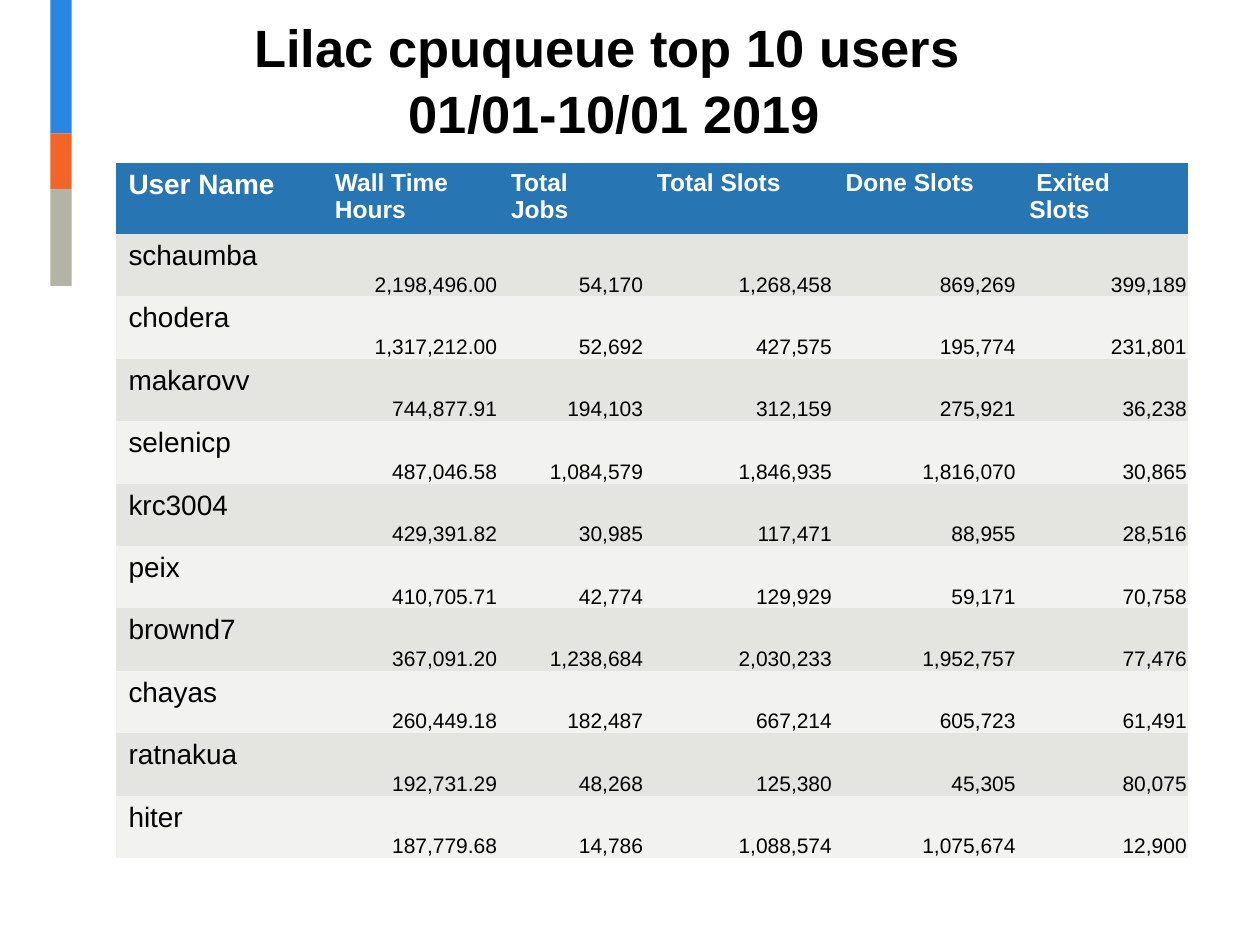
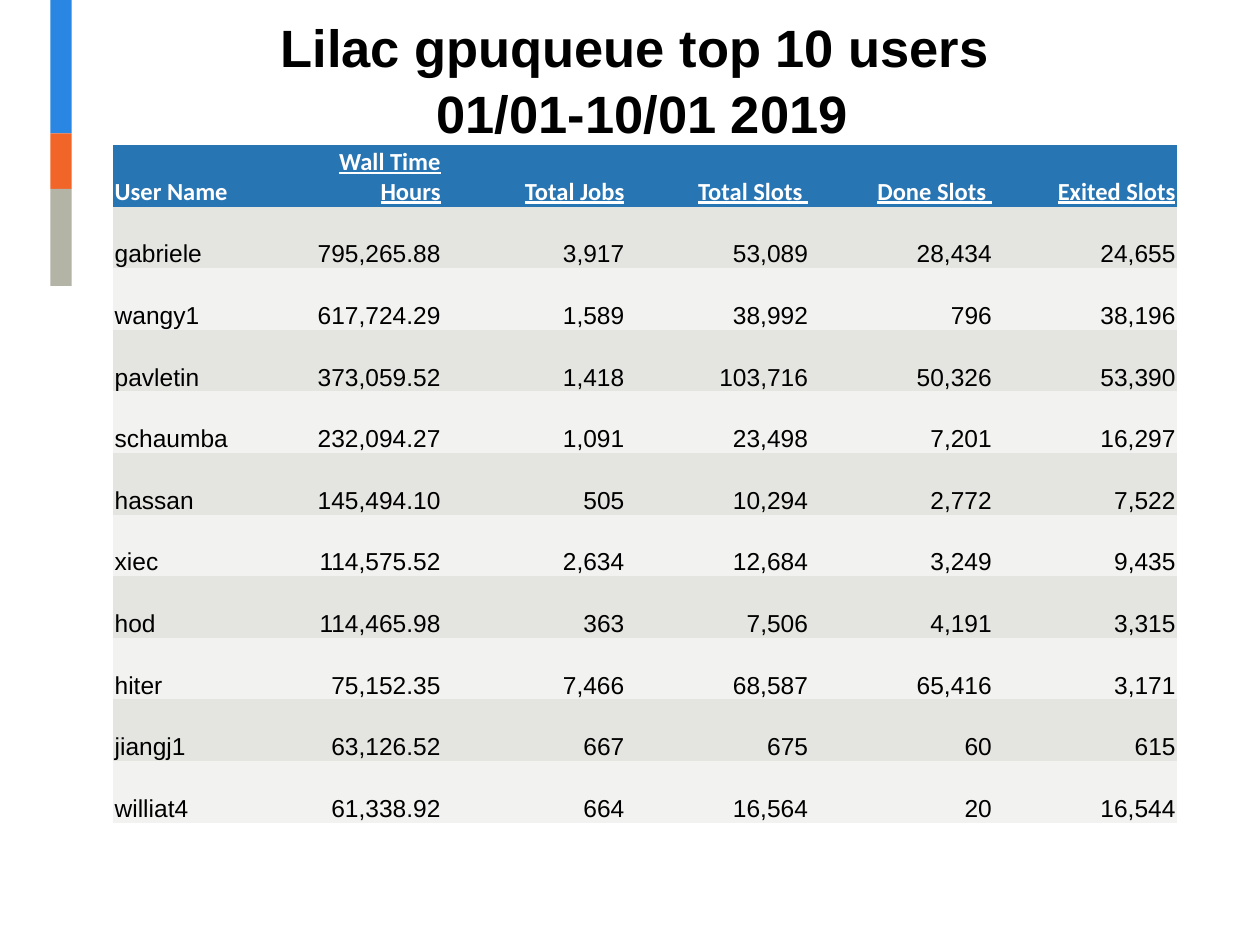
from collections import namedtuple

from pptx import Presentation
from pptx.dml.color import RGBColor
from pptx.enum.shapes import MSO_SHAPE
from pptx.enum.text import MSO_ANCHOR, PP_ALIGN
from pptx.util import Inches, Pt

RECTANGLE = MSO_SHAPE.RECTANGLE
TOP, BOTTOM = MSO_ANCHOR.TOP, MSO_ANCHOR.BOTTOM
LEFT, CENTER, RIGHT = PP_ALIGN.LEFT, PP_ALIGN.CENTER, PP_ALIGN.RIGHT

BLACK = RGBColor(0x00, 0x00, 0x00)
WHITE = RGBColor(0xFF, 0xFF, 0xFF)
HEADER_BLUE = RGBColor(0x28, 0x75, 0xB4)
BAND_DARK = RGBColor(0xE4, 0xE4, 0xE0)
BAND_LIGHT = RGBColor(0xF2, 0xF2, 0xF0)
STRIPE_BLUE = RGBColor(0x29, 0x86, 0xE2)
STRIPE_ORANGE = RGBColor(0xF2, 0x65, 0x29)
STRIPE_GREY = RGBColor(0xB3, 0xB3, 0xA6)

# The page is a grid of 100 columns by 75 rows
SLIDE_WIDTH, SLIDE_HEIGHT = Inches(10), Inches(7.5)
COLUMN, ROW = SLIDE_WIDTH / 100, SLIDE_HEIGHT / 75
Box = namedtuple("Box", "left top width height")

STRIPES = [(STRIPE_BLUE, 10.6), (STRIPE_ORANGE, 4.4), (STRIPE_GREY, 7.7)]
PERIOD = " 01/01-10/01 2019"
NO_TABLE_STYLE = "{2D5ABB26-0587-4C30-8999-92F81FD0307C}"

CPU_HEADERS = ["User Name", "Wall Time Hours", "Total Jobs", "Total Slots",
               "Done Slots", " Exited Slots"]
CPU_USERS = [
    ("schaumba", "2,198,496.00", "54,170", "1,268,458", "869,269", "399,189"),
    ("chodera", "1,317,212.00", "52,692", "427,575", "195,774", "231,801"),
    ("makarovv", "744,877.91", "194,103", "312,159", "275,921", "36,238"),
    ("selenicp", "487,046.58", "1,084,579", "1,846,935", "1,816,070", "30,865"),
    ("krc3004", "429,391.82", "30,985", "117,471", "88,955", "28,516"),
    ("peix", "410,705.71", "42,774", "129,929", "59,171", "70,758"),
    ("brownd7", "367,091.20", "1,238,684", "2,030,233", "1,952,757", "77,476"),
    ("chayas", "260,449.18", "182,487", "667,214", "605,723", "61,491"),
    ("ratnakua", "192,731.29", "48,268", "125,380", "45,305", "80,075"),
    ("hiter", "187,779.68", "14,786", "1,088,574", "1,075,674", "12,900"),
]
GPU_HEADERS = ["User Name", "Wall Time Hours", "Total Jobs", "Total Slots ",
               "Done Slots ", "Exited Slots"]
GPU_USERS = [
    ("gabriele", "795,265.88", "3,917", "53,089", "28,434", "24,655"),
    ("wangy1", "617,724.29", "1,589", "38,992", "796", "38,196"),
    ("pavletin", "373,059.52", "1,418", "103,716", "50,326", "53,390"),
    ("schaumba", "232,094.27", "1,091", "23,498", "7,201", "16,297"),
    ("hassan", "145,494.10", "505", "10,294", "2,772", "7,522"),
    ("xiec", "114,575.52", "2,634", "12,684", "3,249", "9,435"),
    ("hod", "114,465.98", "363", "7,506", "4,191", "3,315"),
    ("hiter", "75,152.35", "7,466", "68,587", "65,416", "3,171"),
    ("jiangj1", "63,126.52", "667", "675", "60", "615"),
    ("williat4", "61,338.92", "664", "16,564", "20", "16,544"),
]

# Text formats of the cells
PADDED = dict(tight=False, anchor=TOP)
CPU_FORMATS = {
    "corner": dict(PADDED, size=16, bold=True, color=WHITE),
    "header": dict(PADDED, size=14, bold=True, color=WHITE),
    "name": dict(PADDED, size=16),
    "value": dict(size=12, align=RIGHT),
}
GPU_HEADER = dict(size=14, font="Calibri", bold=True, color=WHITE)
GPU_FORMATS = {
    "corner": GPU_HEADER,
    "header": dict(GPU_HEADER, align=RIGHT, underline=True),
    "name": dict(size=14),
    "value": dict(size=14, align=RIGHT),
}


def place(box):
    """Turn a box in grid units into left, top, width and height."""
    return (round(box.left * COLUMN), round(box.top * ROW),
            round(box.width * COLUMN), round(box.height * ROW))


def write_text(frame, text, size=14, font="Arial", color=BLACK, bold=False,
               underline=False, align=LEFT, spacing=None):
    frame.word_wrap = True
    para = frame.paragraphs[0]
    para.alignment = align
    para.line_spacing = spacing
    for number, line in enumerate(text.split("\n")):
        if number:
            para.add_line_break()
        span = para.add_run()
        span.text = line
        span.font.size = Pt(size)
        span.font.name = font
        span.font.color.rgb = color
        span.font.bold = bold
        span.font.underline = underline


def add_stripes(page, box):
    total = sum(share for _, share in STRIPES)
    top = box.top
    for color, share in STRIPES:
        height = box.height * share / total
        stripe = page.shapes.add_shape(
            RECTANGLE, *place(Box(box.left, top, box.width, height)))
        stripe.shadow.inherit = False
        stripe.fill.solid()
        stripe.fill.fore_color.rgb = color
        stripe.line.fill.background()
        top += height


def add_title(page, box, text):
    frame = page.shapes.add_textbox(*place(box)).text_frame
    frame.vertical_anchor = BOTTOM
    write_text(frame, text, size=30, bold=True, align=CENTER, spacing=1.04)


def fill_cell(cell, text, fill, tight=True, anchor=BOTTOM, **text_format):
    cell.fill.solid()
    cell.fill.fore_color.rgb = fill
    cell.vertical_anchor = anchor
    if tight:
        cell.margin_left = cell.margin_right = cell.margin_top = Inches(0.01)
        cell.margin_bottom = 0
    write_text(cell.text_frame, text, **text_format)


def add_user_table(page, box, headers, users, shares, formats):
    records = [headers, *users]
    frame = page.shapes.add_table(len(records), len(headers), *place(box))
    table = frame.table
    frame._element.graphic.graphicData.tbl.tblPr[0].text = NO_TABLE_STYLE

    # Column widths follow their shares, rows are equal
    for column, share in zip(table.columns, shares):
        column.width = round(box.width * COLUMN * share / sum(shares))
    for row in table.rows:
        row.height = round(box.height * ROW / len(records))

    # Header row, then alternating bands
    for row_number, record in enumerate(records):
        kinds = ("name", "value") if row_number else ("corner", "header")
        band = BAND_DARK if row_number % 2 else BAND_LIGHT
        fill = band if row_number else HEADER_BLUE
        for column_number, text in enumerate(record):
            kind = kinds[min(column_number, 1)]
            fill_cell(table.cell(row_number, column_number), text, fill,
                      **formats[kind])


def add_queue_page(deck, queue, title_left, table_box, **table_parts):
    page = deck.slides.add_slide(deck.slide_layouts[6])
    add_stripes(page, Box(4, 0, 1.7, 22.7))
    add_title(page, Box(title_left, 3.3, 84, 8.6),
              f"Lilac {queue} top 10 users\n{PERIOD}")
    add_user_table(page, table_box, **table_parts)


def main():
    deck = Presentation()
    deck.slide_width, deck.slide_height = SLIDE_WIDTH, SLIDE_HEIGHT
    add_queue_page(deck, "cpuqueue", 6.2, Box(9.2, 12.9, 85.1, 54.5),
                   headers=CPU_HEADERS, users=CPU_USERS, formats=CPU_FORMATS,
                   shares=[1.64, 1.4, 1.16, 1.5, 1.46, 1.36])
    add_queue_page(deck, "gpuqueue", 8.4, Box(9, 11.5, 84.4, 53.8),
                   headers=GPU_HEADERS, users=GPU_USERS, formats=GPU_FORMATS,
                   shares=[1.41, 1.2] + [1.46] * 4)
    deck.save("out.pptx")


if __name__ == "__main__":
    main()
